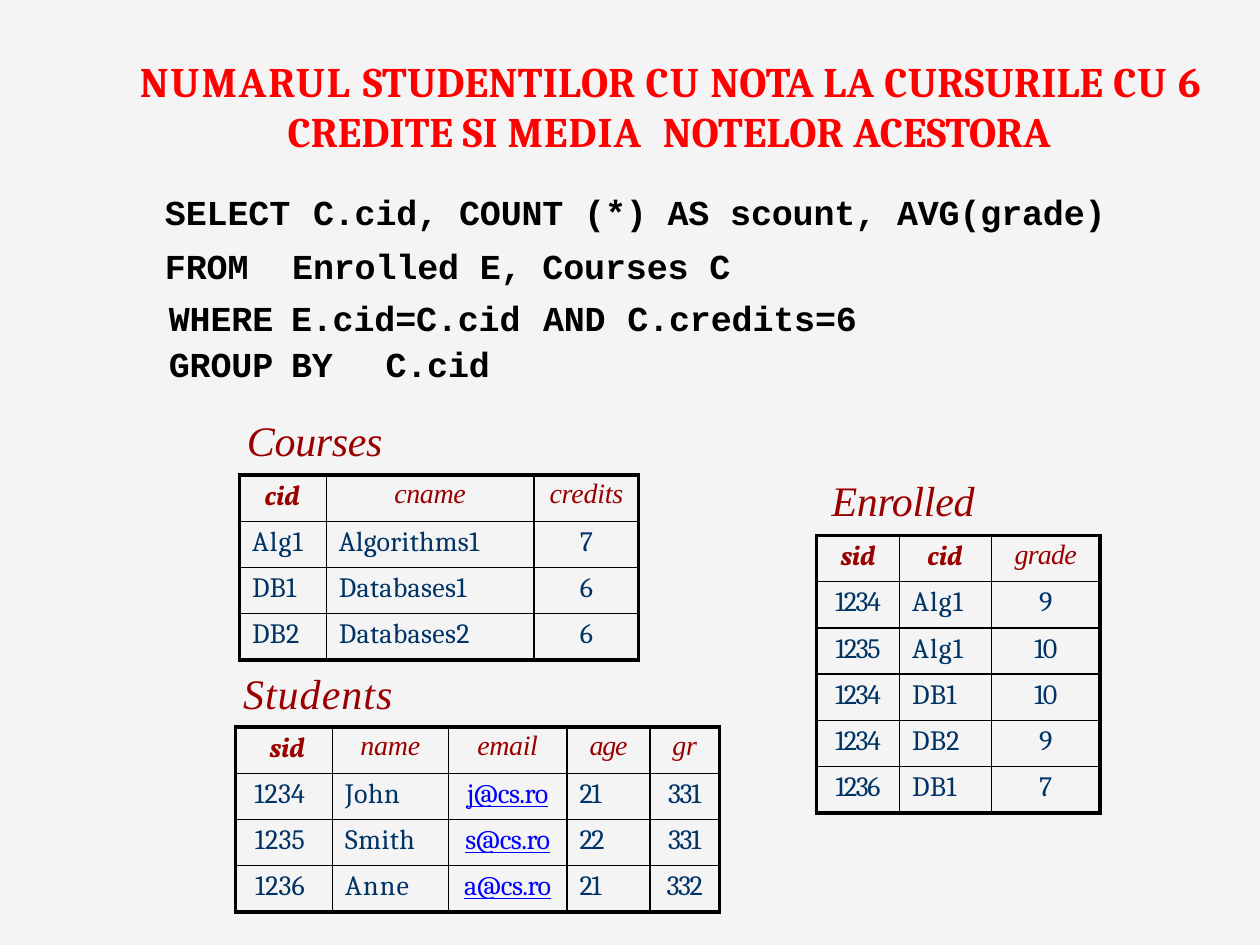
from lxml import etree
from pptx import Presentation
from pptx import util as u
from pptx.dml import color
from pptx.enum import shapes, text
from pptx.oxml import ns

COLORS = {"backdrop": "EAEAEA", "title": "FF0000", "heading": "9A0000", "value": "003366",
          "link": "0000FF", "code": "000000", "border": "000000", "cell": "F4F4F4"}
ALIGNMENTS = {"center": text.PP_ALIGN.CENTER, "right": text.PP_ALIGN.RIGHT}
VALUE_SPACING = {"Alg1": 0.7, "Anne": 0.7}
TITLE_RUNS = [("NUMARUL ", 1.1), ("STUDENTILOR ", 0.2), ("CU ", 0.6), ("NOTA ", 0.1),
              ("LA ", 0.3), ("CURSURILE ", 0.2), ("CU ", 0.6), ("6 ", -1.3),
              ("CREDITE SI ", 0.1), ("MEDIA  ", 0.6), ("NOTELOR ", 0.1), ("ACESTORA", 0)]
# Each column: width, (header, place, spacing, is key), (value place, spacing), values.
COURSES = [
    (0.69, ("cid", 0.2, -0.1, True), (0.1, 0.2), ["Alg1", "DB1", "DB2"]),
    (1.65, ("cname", 0.54, -0.2, False), (0.1, 0.2), ["Algorithms1", "Databases1", "Databases2"]),
    (0.83, ("credits", "center", -0.1, False), ("center", 0), ["7", "6", "6"]),
]
ENROLLED = [
    (0.66, ("sid", "center", -0.1, True), ("center", -0.8), ["1234", "1235", "1234", "1234", "1236"]),
    (0.73, ("cid", 0.22, -0.1, True), (0.1, 0.2), ["Alg1", "Alg1", "DB1", "DB2", "DB1"]),
    (0.86, ("grade", "center", -0.4, False), ("center", -0.8), ["9", "10", "10", "9", "7"]),
]
STUDENTS = [
    (0.77, ("sid", "right", 0, True), ("right", 0.1), ["1234", "1235", "1236"]),
    (0.92, ("name", 0.22, -0.1, False), (0.1, 0.3), ["John", "Smith", "Anne"]),
    (0.94, ("email", "center", -0.2, False), ("center", -0.3), ["j@cs.ro", "s@cs.ro", "a@cs.ro"]),
    (0.66, ("age", 0.18, -0.7, False), (0.1, -0.8), ["21", "22", "21"]),
    (0.55, ("gr", "center", 0, False), ("center", -0.8), ["331", "331", "332"]),
]
QUERY_ROWS = [(20.7, ["WHERE", "E.cid=C.cid", "AND", "C.credits=6"]),
              (22.1, ["GROUP", "BY\tC.cid"])]


def add_run(paragraph, words, size, font, ink, spacing=0, bold=False, italic=False):
    """Add one formatted run and return it."""
    run = paragraph.add_run()
    run.text = words
    run.font.size, run.font.name = u.Pt(size), font
    run.font.bold, run.font.italic = bold, italic
    run.font.color.rgb = color.RGBColor.from_string(COLORS[ink])
    run.font._element.set("spc", str(round(spacing * 100)))
    return run


def add_tabs(paragraph, stops):
    """Give a paragraph left tab stops, in inches."""
    properties = paragraph._p.get_or_add_pPr()
    tabs = etree.SubElement(properties, ns.qn("a:tabLst"))
    for stop in stops:
        etree.SubElement(tabs, ns.qn("a:tab"), pos=str(u.Inches(stop)), algn="l")


def place_paragraph(paragraph, place):
    """Align a paragraph by name, or indent it by a number of inches."""
    if place in ALIGNMENTS:
        paragraph.alignment = ALIGNMENTS[place]
    else:
        paragraph._p.get_or_add_pPr().set("marL", str(u.Inches(place)))


def add_text_box(slide, box, place=0.01):
    """Add a wrapping text box and return its first paragraph."""
    frame = slide.shapes.add_textbox(*map(u.Inches, box)).text_frame
    frame.word_wrap = True
    frame.margin_left = frame.margin_right = frame.margin_bottom = 0
    frame.margin_top = u.Inches(0.01)
    paragraph = frame.paragraphs[0]
    paragraph.space_before = u.Pt(1)
    place_paragraph(paragraph, place)
    return paragraph


def add_table(slide, left, top, widths, heights):
    """Add a plain table with the given column widths and row heights."""
    box = (left, top, sum(widths), sum(heights))
    table = slide.shapes.add_table(len(heights), len(widths), *map(u.Inches, box)).table
    table.first_row = table.horz_banding = False
    for column, width in zip(table.columns, widths):
        column.width = u.Inches(width)
    for row, height in zip(table.rows, heights):
        row.height = u.Inches(height)
    return table


def style_cell(cell, borders, margin_top=0):
    """Set a cell's margins, fill and border widths (left, right, top, bottom)."""
    cell.margin_left = cell.margin_right = cell.margin_bottom = 0
    cell.margin_top = u.Inches(margin_top)
    properties = cell._tc.get_or_add_tcPr()
    for side, width in zip("LRTB", borders):
        line = etree.SubElement(properties, ns.qn(f"a:ln{side}"), w=str(u.Pt(width)))
        if width:
            fill = etree.SubElement(line, ns.qn("a:solidFill"))
            etree.SubElement(fill, ns.qn("a:srgbClr"), val=COLORS["border"])
        else:
            etree.SubElement(line, ns.qn("a:noFill"))
    cell.fill.solid()
    cell.fill.fore_color.rgb = color.RGBColor.from_string(COLORS["cell"])


def add_backdrop(slide, box):
    """Cover the box with a half transparent grey."""
    shape = slide.shapes.add_shape(shapes.MSO_SHAPE.RECTANGLE, *map(u.Inches, box))
    shape.shadow.inherit = False
    shape.line.fill.background()
    shape.fill.solid()
    shape.fill.fore_color.rgb = color.RGBColor.from_string(COLORS["backdrop"])
    tint = shape._element.spPr.find(".//" + ns.qn("a:srgbClr"))
    etree.SubElement(tint, ns.qn("a:alpha"), val="50000")


def add_title(slide, box):
    """Write the centred title."""
    paragraph = add_text_box(slide, box, "center")
    paragraph._parent.vertical_anchor = text.MSO_ANCHOR.MIDDLE
    for words, spacing in TITLE_RUNS:
        add_run(paragraph, words, 24, "Cambria", "title", spacing, bold=True)


def add_query(slide, box, table_left, table_top):
    """Write the query: two lines of text, then the clauses in a table."""
    paragraph = add_text_box(slide, box)
    paragraph.line_spacing = 1.3
    add_tabs(paragraph, [1.01, 1.35, 2.68])
    code = (20, "Courier New", "code", -0.1, True)
    add_run(paragraph, "SELECT\t C.cid, COUNT (*) AS scount, AVG(grade)", *code)
    paragraph.add_line_break()
    add_run(paragraph, "FROM\tEnrolled E, Courses C", *code)

    table = add_table(slide, table_left, table_top, [0.95, 2, 0.67, 1.95], [0.34, 0.33])
    for cell in table.iter_cells():
        style_cell(cell, [0] * 4)
    for row, (spacing, clauses) in enumerate(QUERY_ROWS):
        for column, clause in enumerate(clauses):
            paragraph = table.cell(row, column).text_frame.paragraphs[0]
            paragraph.line_spacing = u.Pt(spacing)
            place_paragraph(paragraph, 0.08 if column else "center")
            if "\t" in clause:
                add_tabs(paragraph, [0.75])
            add_run(paragraph, clause, *code)


def add_relation(slide, name, name_box, name_spacing, left, top, columns):
    """Write a relation's name and its table of rows."""
    add_run(add_text_box(slide, name_box), name, 24, "Times New Roman", "heading",
            name_spacing, italic=True)
    row_count = len(columns[0][3]) + 1
    table = add_table(slide, left, top, [column[0] for column in columns], [0.367] * row_count)
    for x, (_, (header, header_place, header_spacing, is_key), (place, spacing), values) in enumerate(columns):
        for y, words in enumerate([header] + values):
            cell = table.cell(y, x)
            edges = (x == 0, x == len(columns) - 1, y == 0, y == row_count - 1)
            style_cell(cell, [2.25 if edge else 1 for edge in edges], 0.04 if y else 0.03)
            paragraph = cell.text_frame.paragraphs[0]
            paragraph.space_before = u.Pt(2.5)
            cell_place = place if y else header_place
            place_paragraph(paragraph, cell_place)
            if cell_place == "right":
                cell.margin_right = u.Inches(0.22)
            if y == 0:
                font = "Vollkorn" if is_key else "Times New Roman"
                add_run(paragraph, words, 16, font, "heading", header_spacing, is_key, True)
            else:
                is_link = "@" in words
                run = add_run(paragraph, words, 16, "Cambria", "link" if is_link else "value",
                              VALUE_SPACING.get(words, spacing))
                run.font.underline = is_link


def main():
    """Build the slide and save it."""
    presentation = Presentation()
    presentation.slide_width, presentation.slide_height = u.Inches(10), u.Inches(7.5)
    slide = presentation.slides.add_slide(presentation.slide_layouts[6])
    add_backdrop(slide, (0, 0, 10, 7.5))
    add_title(slide, (0.75, 0.42, 9.12, 0.83))
    add_relation(slide, "Enrolled", (6.59, 3.76, 1.18, 0.43), -0.2, 6.48, 4.25, ENROLLED)
    add_relation(slide, "Students", (1.92, 5.29, 1.23, 0.43), 0.6, 1.87, 5.77, STUDENTS)
    add_relation(slide, "Courses", (1.95, 3.28, 1.1, 0.43), -0.2, 1.9, 3.77, COURSES)
    add_query(slide, (1.3, 1.4, 7.86, 0.9), 1.28, 2.43)
    presentation.save("out.pptx")


if __name__ == "__main__":
    main()
